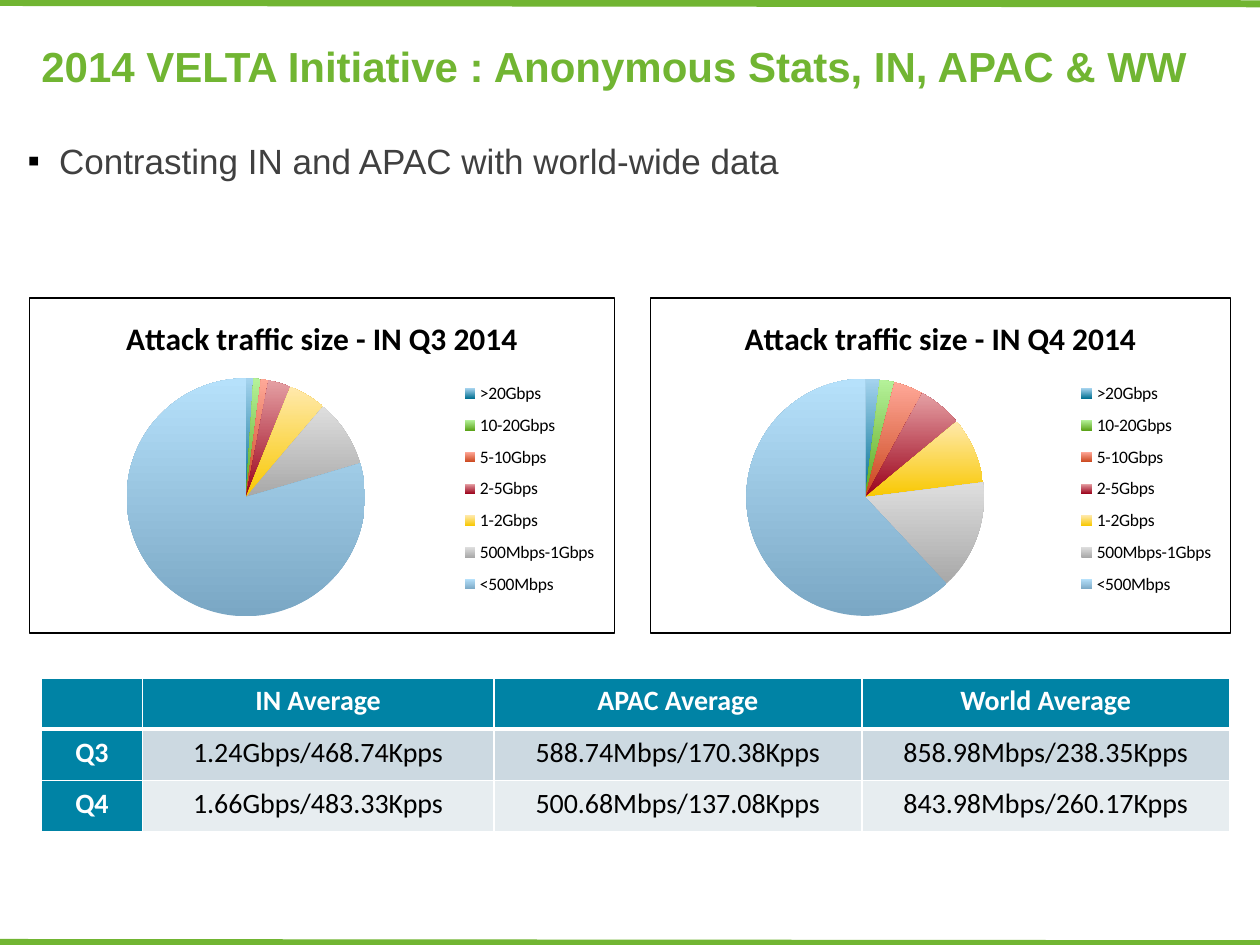
from lxml import etree
from pptx import Presentation
from pptx import util as u
from pptx.chart import data as chart_data
from pptx.dml.color import RGBColor
from pptx.enum import chart as charts, shapes, text
from pptx.oxml import parse_xml
from pptx.oxml.ns import nsdecls, qn

GREEN, TEAL, WHITE, BLACK = "71B532", "0083A5", "FFFFFF", "000000"
color = RGBColor.from_string


def style(font, hex_color, **values):
    """Set the colour and the given attributes of a font."""
    values.setdefault("bold", False)
    for name, value in values.items():
        setattr(font, name, value)
    font.color.rgb = color(hex_color)


def layout(x, y, width, height, target=""):
    """A manual chart layout, in shares of the chart's size."""
    marks = f'<c:layoutTarget val="{target}"/>' if target else ""
    marks += '<c:xMode val="edge"/><c:yMode val="edge"/>'
    for tag, value in zip("xywh", (x, y, width, height)):
        marks += f'<c:{tag} val="{value}"/>'
    return parse_xml(f'<c:layout {nsdecls("c")}><c:manualLayout>{marks}'
                     "</c:manualLayout></c:layout>")


presentation = Presentation()
presentation.slide_width = WIDTH = u.Inches(10)
presentation.slide_height = HEIGHT = u.Inches(7.5)
slide = presentation.slides.add_slide(presentation.slide_layouts[6])

# Green rules along the top and bottom edges
for y in (0.02, 7.48):
    rule = slide.shapes.add_connector(
        shapes.MSO_CONNECTOR.STRAIGHT, 0, u.Inches(y),
        u.Inches(10.02), u.Inches(y + 0.01))
    rule.line.color.rgb = color(GREEN)
    rule.line.width = u.Pt(4)
    etree.SubElement(rule._element.spPr, qn("a:effectLst"))

# Title and bullet
headings = [
    ("2014 VELTA Initiative : Anonymous Stats, IN, APAC & WW",
     (0.23, 0.15, 9.53, 0.75), text.MSO_ANCHOR.MIDDLE, GREEN,
     {"size": u.Pt(24), "bold": True}, False),
    ("Contrasting IN and APAC with world-wide data",
     (0.12, 1.06, 9.88, 0.44), text.MSO_ANCHOR.TOP, "404040",
     {"size": u.Pt(20)}, True),
]
for wording, box, anchor, hex_color, values, bulleted in headings:
    shape = slide.shapes.add_textbox(*map(u.Inches, box))
    frame = shape.text_frame
    frame.word_wrap = True
    frame.vertical_anchor = anchor
    paragraph = frame.paragraphs[0]
    paragraph.text = wording
    if bulleted:
        properties = paragraph._p.get_or_add_pPr()
        properties.set("marL", str(u.Inches(0.25)))
        properties.set("indent", str(u.Inches(-0.26)))
        bullet_color = etree.SubElement(properties, qn("a:buClr"))
        etree.SubElement(bullet_color, qn("a:srgbClr"), val=BLACK)
        etree.SubElement(properties, qn("a:buFont"), typeface="Arial")
        etree.SubElement(properties, qn("a:buChar"), char="▪")
    style(paragraph.runs[0].font, hex_color, name="Arial", **values)

# Pie charts: each slice fades from a dark foot to a light head
slices = {
    ">20Gbps": ("006F91", "A5D3EE"),
    "10-20Gbps": ("5CA41A", "B5F29A"),
    "5-10Gbps": ("C9441A", "FFA898"),
    "2-5Gbps": ("9A0019", "E5A0A4"),
    "1-2Gbps": ("F8C800", "FFE9AC"),
    "500Mbps-1Gbps": ("A8A8A8", "DEDEDE"),
    "<500Mbps": ("7AA7C4", "B6E1FB"),
}
pies = [
    ("Q3", 0.23, 4.65, (1, 1, 1, 3, 5, 9, 78)),
    ("Q4", 5.16, 4.61, (2, 2, 4, 6, 9, 15, 62)),
]
for quarter, left, width, shares in pies:
    pie_data = chart_data.CategoryChartData()
    pie_data.categories = list(slices)
    pie_data.add_series("Series 1", shares)
    chart = slide.shapes.add_chart(
        charts.XL_CHART_TYPE.PIE, u.Inches(left), u.Inches(2.36),
        u.Inches(width), u.Inches(2.67), pie_data).chart
    style(chart.font, BLACK, name="Calibri", size=u.Pt(10))

    chart.has_title = True
    chart.chart_title.include_in_layout = False
    title = chart.chart_title.text_frame
    title.text = f"Attack traffic size - IN {quarter} 2014"
    style(title.paragraphs[0].runs[0].font, BLACK, name="Calibri",
          size=u.Pt(18), bold=True)

    chart.has_legend = True
    chart.legend.position = charts.XL_LEGEND_POSITION.RIGHT
    chart.legend.include_in_layout = False
    legend = chart.legend._element
    area = chart._chartSpace.chart.plotArea
    for parent in (legend, area):
        for old in parent.findall(qn("c:layout")):
            parent.remove(old)
    legend.find(qn("c:legendPos")).addnext(layout(0.73, 0.22, 0.25, 0.7))
    area.insert(0, layout(0.165, 0.24, 0.41, 0.71, "inner"))

    plot = chart.plots[0]
    plot.vary_by_categories = True
    for index, fade in enumerate(slices.values()):
        fill = plot.series[0].points[index].format.fill
        fill.gradient()
        fill.gradient_angle = 90
        for stop, position, hex_color in zip(fill.gradient_stops, (0, 1), fade):
            stop.position = position
            stop.color.rgb = color(hex_color)

    chart._chartSpace.chart.addnext(parse_xml(
        f'<c:spPr {nsdecls("c", "a")}>'
        f'<a:solidFill><a:srgbClr val="{WHITE}"/></a:solidFill>'
        f'<a:ln w="{u.Pt(0.75)}"><a:solidFill><a:srgbClr val="{BLACK}"/>'
        "</a:solidFill></a:ln></c:spPr>"))

# Table of averages
rows = [
    ("", "IN Average", "APAC Average", "World Average"),
    ("Q3", "1.24Gbps/468.74Kpps", "588.74Mbps/170.38Kpps", "858.98Mbps/238.35Kpps"),
    ("Q4", "1.66Gbps/483.33Kpps", "500.68Mbps/137.08Kpps", "843.98Mbps/260.17Kpps"),
]
row_fills = (TEAL, "CCD9E1", "E7EDF0")
column_widths = (0.8, 2.79, 2.92, 2.92)
table = slide.shapes.add_table(
    len(rows), len(column_widths), u.Inches(0.33), u.Inches(5.38),
    u.Inches(sum(column_widths)), u.Inches(1.22)).table
for column, width in zip(table.columns, column_widths):
    column.width = u.Inches(width)
for row_index, row in enumerate(rows):
    table.rows[row_index].height = u.Inches(1.22 / len(rows))
    for column_index, wording in enumerate(row):
        cell = table.cell(row_index, column_index)
        heading = row_index == 0 or column_index == 0
        paragraph = cell.text_frame.paragraphs[0]
        paragraph.text = wording
        paragraph.alignment = text.PP_ALIGN.CENTER
        style(paragraph.font, WHITE if heading else BLACK, name="Calibri",
              size=u.Pt(16), bold=heading)
        for run in paragraph.runs:
            style(run.font, WHITE if heading else BLACK, name="Calibri",
                  size=u.Pt(16), bold=heading)
        cell_properties = cell._tc.get_or_add_tcPr()
        for side in ("L", "R", "T", "B"):
            thick = (row_index, side) in ((0, "B"), (1, "T"))
            border = etree.SubElement(cell_properties, qn(f"a:ln{side}"),
                                      w=str(u.Pt(3 if thick else 1)))
            paint = etree.SubElement(border, qn("a:solidFill"))
            etree.SubElement(paint, qn("a:srgbClr"), val=WHITE)
        cell.fill.solid()
        cell.fill.fore_color.rgb = color(TEAL if heading else row_fills[row_index])

presentation.save("out.pptx")
